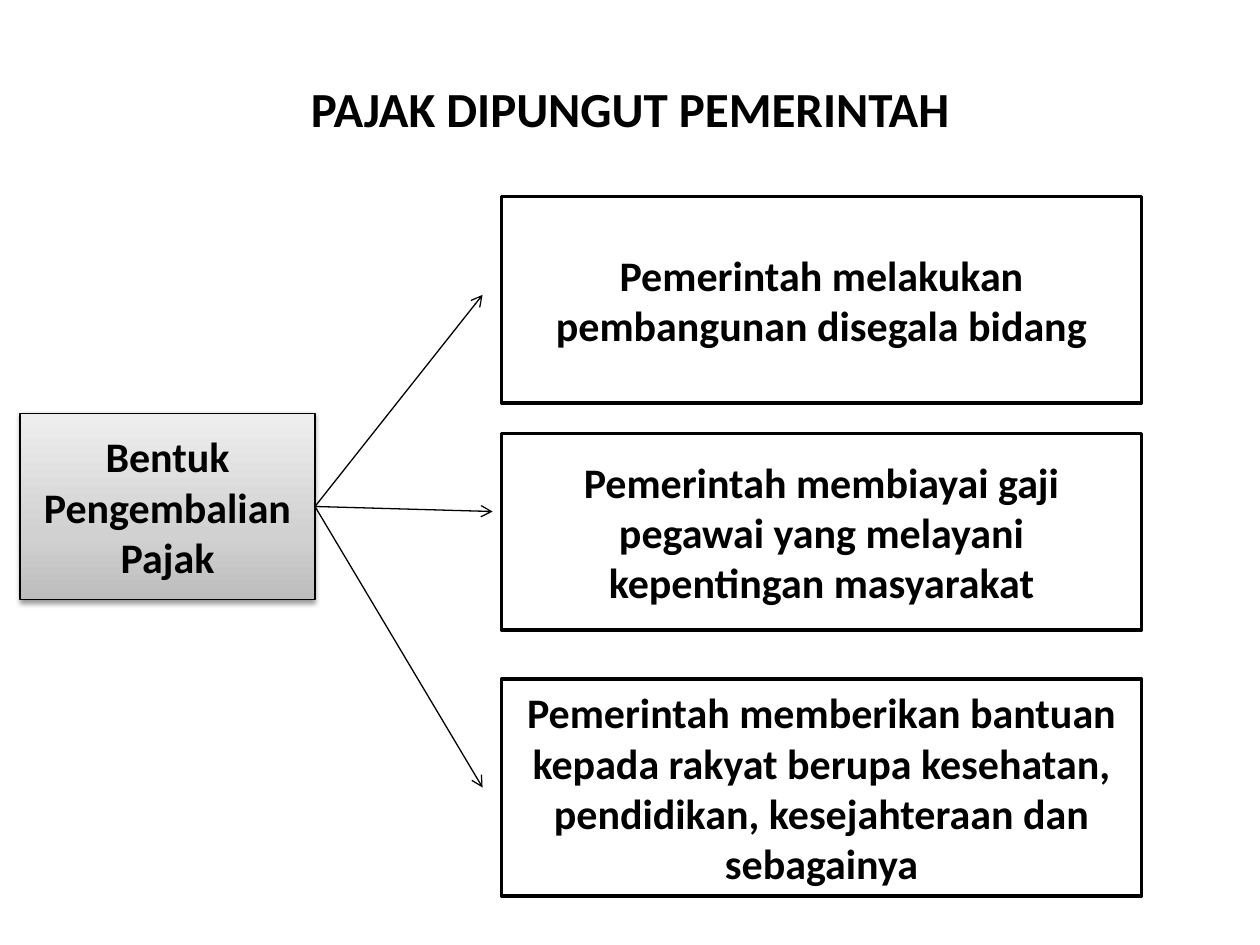
from copy import deepcopy

from lxml import etree
from pptx import Presentation
from pptx.dml.color import RGBColor
from pptx.enum.shapes import MSO_CONNECTOR, MSO_SHAPE
from pptx.enum.text import MSO_ANCHOR, PP_ALIGN
from pptx.oxml.ns import qn
from pptx.util import Inches, Pt

RECTANGLE = MSO_SHAPE.RECTANGLE
STRAIGHT = MSO_CONNECTOR.STRAIGHT
MIDDLE = MSO_ANCHOR.MIDDLE
CENTER = PP_ALIGN.CENTER

BLACK = RGBColor(0, 0, 0)
WHITE = RGBColor(255, 255, 255)
GRAYS = (
    (0, RGBColor(0xBD, 0xBD, 0xBD)),
    (0.35, RGBColor(0xD1, 0xD1, 0xD1)),
    (1, RGBColor(0xEE, 0xEE, 0xEE)),
)
RIGHT_SIDE = 3

BOX_LEFT, BOX_WIDTH = 3.98, 5.08
# Box top, box height, arrow tip, text
RETURNS = (
    (1.56, 1.64, (3.83, 2.34), "Pemerintah melakukan pembangunan disegala bidang"),
    (3.44, 1.56, (3.91, 4.06),
     "Pemerintah membiayai gaji pegawai yang melayani kepentingan masyarakat"),
    (5.39, 1.72, (3.83, 6.25),
     "Pemerintah memberikan bantuan kepada rakyat berupa kesehatan, "
     "pendidikan, kesejahteraan dan sebagainya"),
)


class SlideBuilder:
    font = "Calibri"
    title_size = Pt(28)
    text_size = Pt(24)
    thin = Pt(0.75)
    thick = Pt(2)

    def __init__(self, page):
        self.page = page

    def add_text(self, box, text, size):
        frame = box.text_frame
        frame.word_wrap = True
        frame.vertical_anchor = MIDDLE
        para = frame.paragraphs[0]
        para.alignment = CENTER
        span = para.add_run()
        span.text = text
        span.font.name = self.font
        span.font.size = size
        span.font.bold = True
        span.font.color.rgb = BLACK

    def title(self, text, *place):
        box = self.page.shapes.add_textbox(*map(Inches, place))
        self.add_text(box, text, self.title_size)

    def box(self, text, *place, line_width=thick):
        box = self.page.shapes.add_shape(RECTANGLE, *map(Inches, place))
        box.shadow.inherit = False
        box.fill.solid()
        box.fill.fore_color.rgb = WHITE
        box.line.color.rgb = BLACK
        box.line.width = line_width
        self.add_text(box, text, self.text_size)
        return box

    def raised_box(self, text, *place):
        """Add a box with a gray gradient and a soft shadow below it."""
        box = self.box(text, *place, line_width=self.thin)
        box.fill.gradient()
        box.fill.gradient_angle = 90
        properties = box.element.spPr
        stop_list = properties.find(".//" + qn("a:gsLst"))
        stop_list.append(deepcopy(stop_list[-1]))
        for stop, (position, color) in zip(box.fill.gradient_stops, GRAYS):
            stop.position = position
            stop.color.rgb = color

        effects = properties.find(qn("a:effectLst"))
        shadow = etree.SubElement(
            effects, qn("a:outerShdw"), blurRad=str(Pt(3.1)),
            dist=str(Pt(1.6)), dir="5400000", rotWithShape="0")
        color = etree.SubElement(shadow, qn("a:srgbClr"), val=str(BLACK))
        etree.SubElement(color, qn("a:alpha"), val="38000")
        return box

    def arrow(self, source, tip):
        start = source.left + source.width, source.top + source.height // 2
        arrow = self.page.shapes.add_connector(STRAIGHT, *start, *map(Inches, tip))
        arrow.begin_connect(source, RIGHT_SIDE)
        arrow.line.color.rgb = BLACK
        arrow.line.width = self.thin
        properties = arrow.element.spPr
        etree.SubElement(properties.find(qn("a:ln")), qn("a:tailEnd"), type="arrow")
        etree.SubElement(properties, qn("a:effectLst"))


def main():
    deck = Presentation()
    deck.slide_width, deck.slide_height = Inches(10), Inches(7.5)
    builder = SlideBuilder(deck.slides.add_slide(deck.slide_layouts[6]))

    builder.title("PAJAK DIPUNGUT PEMERINTAH", 0.75, 0.23, 8.5, 1.25)
    source = builder.raised_box("Bentuk Pengembalian Pajak", 0.16, 3.28, 2.34, 1.48)
    for top, height, tip, text in RETURNS:
        builder.box(text, BOX_LEFT, top, BOX_WIDTH, height)
        builder.arrow(source, tip)

    deck.save("out.pptx")


if __name__ == "__main__":
    main()
